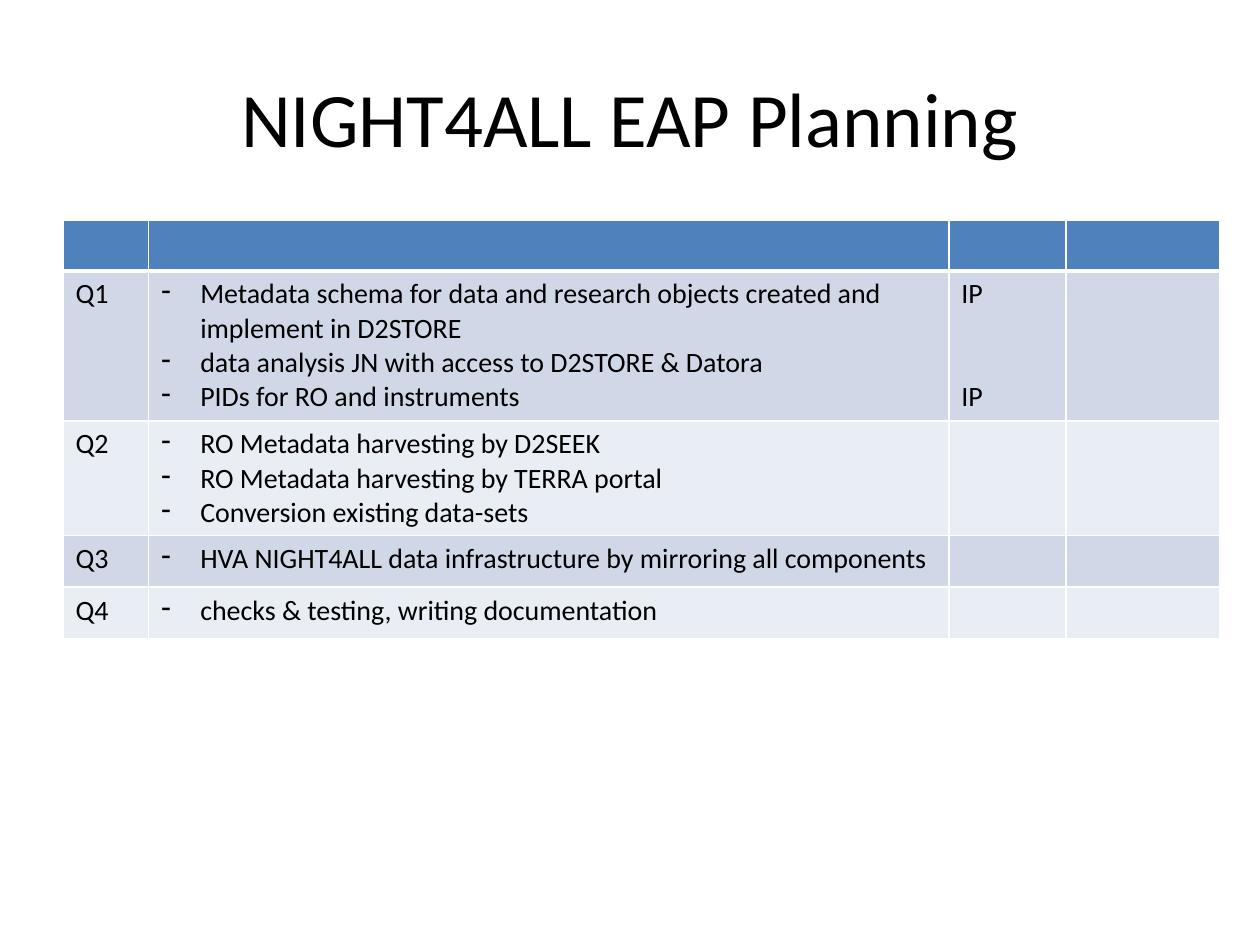
"""Build the yearly planning slide with a quarter-by-quarter task table."""
from dataclasses import dataclass

from lxml.etree import SubElement
from pptx import Presentation
from pptx.dml.color import RGBColor
from pptx.enum.text import MSO_ANCHOR as Anchor, PP_ALIGN as Align
from pptx.oxml.ns import qn
from pptx.util import Inches, Pt

BLACK = RGBColor(0x00, 0x00, 0x00)
WHITE = RGBColor(0xFF, 0xFF, 0xFF)
HEADER = RGBColor(0x4F, 0x81, 0xBD)
BANDS = (RGBColor(0xD0, 0xD8, 0xE8), RGBColor(0xE9, 0xED, 0xF4))
COLUMN_WIDTHS = (0.68, 6.35, 0.93, 1.22)
HEADER_HEIGHT = 0.4
HANGING = Inches(0.31)
TASK_SIZE = 16
LINE_HEIGHT = 19.5


@dataclass(frozen=True)
class Owner:
    name: str
    lines_before: int = 0


@dataclass(frozen=True)
class Quarter:
    label: str
    height: float
    tasks: tuple[str, ...]
    owners: tuple[Owner, ...] = ()


QUARTERS = (
    Quarter("Q1", 1.19, (
        "Metadata schema for data and research objects created and implement in D2STORE",
        "data analysis JN with access to D2STORE & Datora",
        "PIDs for RO and instruments",
    ), (Owner("IP"), Owner("IP", 2))),
    Quarter("Q2", 0.91, (
        "RO Metadata harvesting by D2SEEK",
        "RO Metadata harvesting by TERRA portal",
        "Conversion existing data-sets",
    )),
    Quarter("Q3", 0.41, ("HVA NIGHT4ALL data infrastructure by mirroring all components",)),
    Quarter("Q4", 0.41, ("checks & testing, writing documentation",)),
)


def write(para, text: str, size: int) -> None:
    span = para.add_run()
    span.text = text
    for name, value in {"name": "Calibri", "size": Pt(size)}.items():
        setattr(span.font, name, value)
    span.font.color.rgb = BLACK


def paragraphs(frame, count: int) -> list:
    return [frame.paragraphs[0]] + [frame.add_paragraph() for _ in range(count - 1)]


def add_dash(para) -> None:
    properties = para._p.get_or_add_pPr()
    properties.set("marL", str(HANGING))
    properties.set("indent", str(-HANGING))
    SubElement(properties, qn("a:buFontTx"))
    SubElement(properties, qn("a:buChar"), char="-")


def style_cell(cell, fill: RGBColor, top: int = 1, bottom: int = 1) -> None:
    properties = cell._tc.get_or_add_tcPr()
    for side, width in {"L": 1, "R": 1, "T": top, "B": bottom}.items():
        line = SubElement(properties, qn(f"a:ln{side}"), w=str(Pt(width)))
        solid = SubElement(line, qn("a:solidFill"))
        SubElement(solid, qn("a:srgbClr"), val=str(WHITE))
    cell.fill.solid()
    cell.fill.fore_color.rgb = fill


def add_title(page, text: str) -> None:
    box = page.shapes.add_textbox(Inches(0.5), Inches(0.3), Inches(9), Inches(1.25))
    for name, value in {"word_wrap": True, "vertical_anchor": Anchor.MIDDLE}.items():
        setattr(box.text_frame, name, value)
    para = box.text_frame.paragraphs[0]
    para.alignment = Align.CENTER
    write(para, text, 44)


def fill_quarter(cells: list, quarter: Quarter) -> None:
    label, tasks, owners = cells[:3]
    write(label.text_frame.paragraphs[0], quarter.label, TASK_SIZE)
    for para, task in zip(paragraphs(tasks.text_frame, len(quarter.tasks)), quarter.tasks):
        add_dash(para)
        write(para, task, TASK_SIZE)
    for para, owner in zip(paragraphs(owners.text_frame, len(quarter.owners)), quarter.owners):
        para.space_before = Pt(owner.lines_before * LINE_HEIGHT)
        write(para, owner.name, TASK_SIZE)


def add_plan(page, quarters: tuple[Quarter, ...]) -> None:
    heights = [HEADER_HEIGHT] + [quarter.height for quarter in quarters]
    table = page.shapes.add_table(
        len(heights), len(COLUMN_WIDTHS), Inches(0.5), Inches(1.75),
        Inches(sum(COLUMN_WIDTHS)), Inches(sum(heights)),
    ).table
    for column, width in zip(table.columns, COLUMN_WIDTHS):
        column.width = Inches(width)
    for index, (row, height) in enumerate(zip(table.rows, heights)):
        row.height = Inches(height)
        cells = list(row.cells)
        for cell in cells:
            if index == 0:
                style_cell(cell, HEADER, bottom=3)
            else:
                style_cell(cell, BANDS[(index - 1) % 2], top=3 if index == 1 else 1)
        if index:
            fill_quarter(cells, quarters[index - 1])


def main() -> None:
    deck = Presentation()
    deck.slide_width, deck.slide_height = Inches(10), Inches(7.5)
    page = deck.slides.add_slide(deck.slide_layouts[6])
    add_title(page, "NIGHT4ALL EAP Planning")
    add_plan(page, QUARTERS)
    deck.save("out.pptx")


if __name__ == "__main__":
    main()
